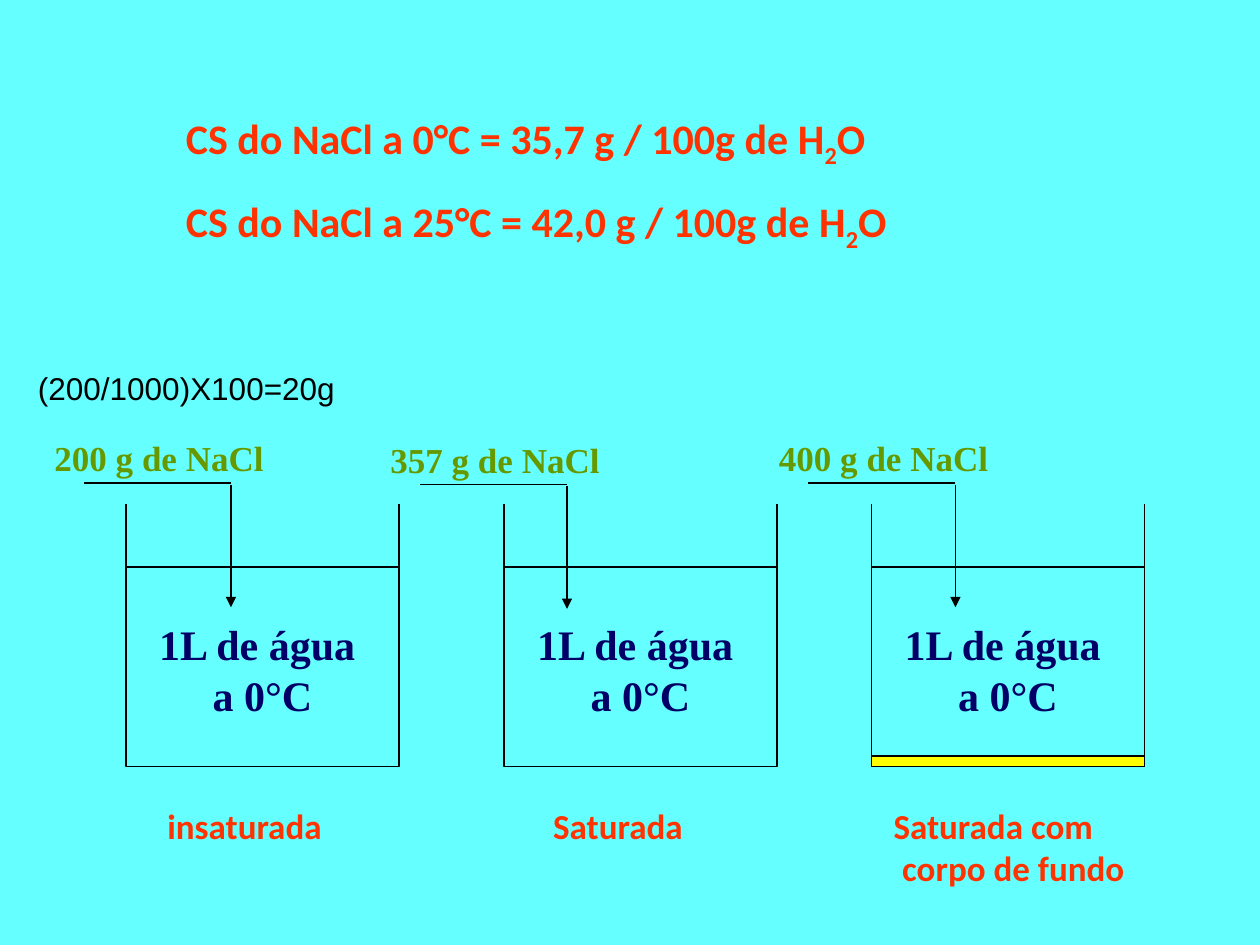
from lxml import etree
from pptx import Presentation
from pptx.dml.color import RGBColor
from pptx.enum import shapes, text
from pptx.oxml import ns
from pptx.util import Pt

CYAN, YELLOW, BLACK = "66FFFF", "FFFF00", "000000"
RED, GREEN, NAVY = "FF3300", "669900", "000066"
SERIF, SANS = "Times New Roman", "Calibri"
BEAKER_WIDTH, WATER_TOP, WATER_HEIGHT = 156, 324, 114


def color(hex_value):
    return RGBColor.from_string(hex_value)


def add_run(paragraph, words, font, size, hex_value, bold=True, subscript=False):
    run = paragraph.add_run()
    run.text = words
    run.font.name = font
    run.font.size = Pt(size)
    run.font.bold = bold
    run.font.color.rgb = color(hex_value)
    if subscript:
        run.font._element.set("baseline", "-25000")


def add_text(parent, box, lines, font, size, hex_value, bold=True,
             align=text.PP_ALIGN.LEFT, indent=0, first_line=0):
    """Add one paragraph; lines are parted by line breaks, indents are in points."""
    frame = parent.add_textbox(*map(Pt, box)).text_frame
    frame.word_wrap = True
    paragraph = frame.paragraphs[0]
    paragraph.alignment = align
    if indent:
        properties = paragraph._p.get_or_add_pPr()
        properties.set("marL", str(Pt(indent)))
        properties.set("indent", str(Pt(first_line)))
    for number, line in enumerate(lines):
        if number:
            paragraph.add_line_break()
        add_run(paragraph, line, font, size, hex_value, bold)


def add_line(parent, start, end, arrow=False):
    line = parent.add_connector(
        shapes.MSO_CONNECTOR.STRAIGHT, *map(Pt, (*start, *end)))
    line.line.color.rgb = color(BLACK)
    line.line.width = Pt(0.75)
    if arrow:
        etree.SubElement(line.line._get_or_add_ln(), ns.qn("a:tailEnd"), type="triangle")
    etree.SubElement(line._element.spPr, ns.qn("a:effectLst"))


def add_box(parent, box, fill):
    rectangle = parent.add_shape(shapes.MSO_SHAPE.RECTANGLE, *map(Pt, box))
    rectangle.shadow.inherit = False
    rectangle.fill.solid()
    rectangle.fill.fore_color.rgb = color(fill)
    rectangle.line.color.rgb = color(BLACK)
    rectangle.line.width = Pt(0.75)


def add_beaker(slide, left):
    beaker = slide.shapes.add_group_shape().shapes
    add_box(beaker, (left, WATER_TOP, BEAKER_WIDTH, WATER_HEIGHT), CYAN)
    for wall in (left, left + BEAKER_WIDTH):
        add_line(beaker, (wall, WATER_TOP), (wall, WATER_TOP - 36))
    add_text(beaker, (left + 6, 350, 144, 65), ["1L de água ", "a 0°C"],
             SERIF, 24, NAVY, align=text.PP_ALIGN.CENTER)


def add_salt(slide, left, top, grams):
    """Add the salt label, its underline and the arrow into the water."""
    salt = slide.shapes.add_group_shape().shapes
    add_text(salt, (left, top, 168, 31), [f"{grams} g de NaCl"], SERIF, 20, GREEN)
    stem = left + 108
    add_line(salt, (stem, top + 31), (stem, top + 101), arrow=True)
    add_line(salt, (stem, top + 30), (left + 24, top + 30))


def set_solubility_title(slide, facts):
    title = slide.shapes.title
    title.left, title.top, title.width, title.height = map(Pt, (99, 60.5, 510, 79))
    frame = title.text_frame
    frame.word_wrap = True
    frame.auto_size = text.MSO_AUTO_SIZE.NONE
    frame.vertical_anchor = text.MSO_ANCHOR.TOP
    for number, (degrees, grams) in enumerate(facts):
        paragraph = frame.add_paragraph() if number else frame.paragraphs[0]
        paragraph.alignment = text.PP_ALIGN.LEFT
        paragraph.space_before = Pt(15 if number else 0)
        fact = f"CS do NaCl a {degrees}°C = {grams} g / 100g de H"
        for words in (fact, "2", "O"):
            add_run(paragraph, words, SANS, 24, RED, subscript=words == "2")


def main():
    deck = Presentation()
    deck.slide_width, deck.slide_height = Pt(720), Pt(540)
    slide = deck.slides.add_slide(deck.slide_layouts[5])
    slide.background.fill.solid()
    slide.background.fill.fore_color.rgb = color(CYAN)

    set_solubility_title(slide, [("0", "35,7"), ("25", "42,0")])

    beaker_lefts = (72, 288, 498)
    for left in beaker_lefts:
        add_beaker(slide, left)
    for left, top, grams in ((216, 247, 357), (24, 246, 200), (438, 246, 400)):
        add_salt(slide, left, top, grams)
    add_box(slide.shapes, (beaker_lefts[-1], 432, BEAKER_WIDTH, 6), YELLOW)

    outcomes = (
        ((84, 456, 126, 31), ["insaturada"], 4.5, 0),
        ((300, 456, 126, 31), ["Saturada"], 9, 0),
        ((486, 456, 186, 55), ["Saturada com", "corpo de fundo"], 22.5, -5),
    )
    for box, lines, indent, first_line in outcomes:
        add_text(slide.shapes, box, lines, SANS, 20, RED,
                 indent=indent, first_line=first_line)
    add_text(slide.shapes, (14.5, 207.5, 184, 29), ["(200/1000)X100=20g"],
             "Arial", 18, BLACK, bold=False, align=text.PP_ALIGN.CENTER)

    deck.save("out.pptx")


if __name__ == "__main__":
    main()
